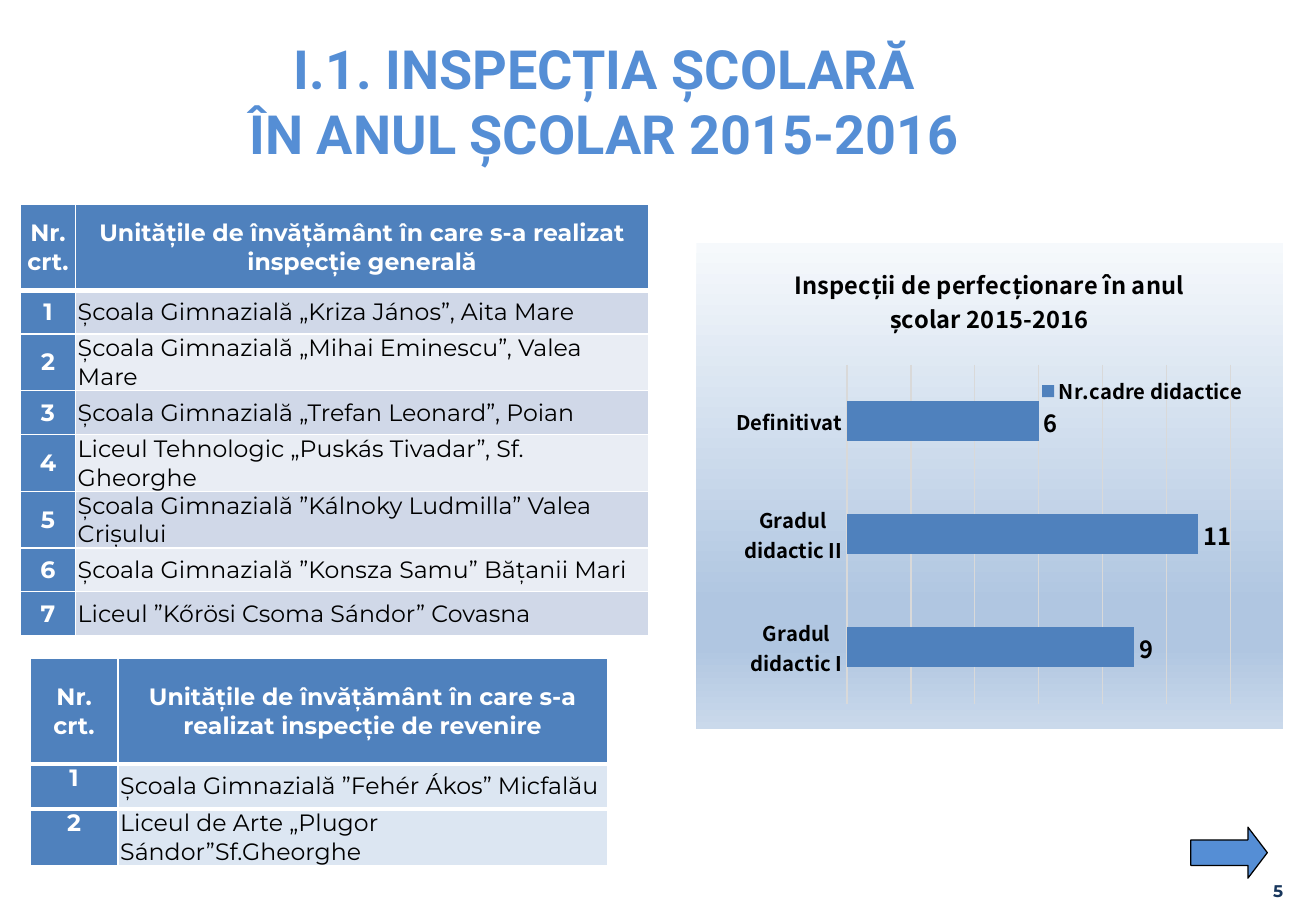
"""Builds the school inspection slide with two tables and a bar chart."""
from lxml.etree import SubElement
from pptx import Presentation
from pptx.chart.data import CategoryChartData
from pptx.dml.color import RGBColor
from pptx.enum.chart import XL_CHART_TYPE, XL_LABEL_POSITION, XL_LEGEND_POSITION, XL_TICK_MARK
from pptx.enum.shapes import MSO_SHAPE
from pptx.enum.text import MSO_ANCHOR, PP_ALIGN
from pptx.oxml import parse_xml
from pptx.oxml.ns import nsdecls, qn
from pptx.util import Inches, Pt

COLORS = {
    "title": "558ED5", "number": "17365C", "black": "000000", "white": "FFFFFF",
    "blue": "4F81BD", "band": "D0D8E8", "light": "E9EDF4", "pale": "DCE6F2",
    "grid": "D9D9D9",
}
TITLE = "I.1. INSPECȚIA ȘCOLARĂ\nÎN ANUL ȘCOLAR 2015-2016"
PAGE_NUMBER = "5"
TABLES = [
    {
        "place": (0.17, 1.68), "columns": (0.45, 4.72), "heights": (0.71, 0.36),
        "heading": "Unitățile de învățământ în care s-a realizat inspecție generală",
        "schools": [
            "Școala Gimnazială „Kriza János”, Aita Mare",
            "Școala Gimnazială „Mihai Eminescu”, Valea Mare",
            "Școala Gimnazială „Trefan Leonard”, Poian",
            "Liceul Tehnologic „Puskás Tivadar”, Sf. Gheorghe",
            "Școala Gimnazială ”Kálnoky Ludmilla” Valea Crișului",
            "Școala Gimnazială ”Konsza Samu” Bățanii Mari",
            "Liceul ”Kőrösi Csoma Sándor” Covasna",
        ],
        "bands": ("band", "light"), "thick_rules": (1,), "number_anchor": MSO_ANCHOR.MIDDLE,
    },
    {
        "place": (0.25, 5.42), "columns": (0.72, 4.03), "heights": (0.87, 0.37),
        "heading": "Unitățile de învățământ în care s-a realizat inspecție de revenire",
        "schools": [
            "Școala Gimnazială ”Fehér Ákos” Micfalău",
            "Liceul de Arte „Plugor Sándor”Sf.Gheorghe",
        ],
        "bands": ("pale", "pale"), "thick_rules": (1, 2), "number_anchor": MSO_ANCHOR.TOP,
    },
]
CHART_TITLE = "Inspecții de perfecționare în anul școlar 2015-2016"
SERIES_NAME = "Nr.cadre didactice"
TEACHERS = {"Gradul didactic I": 9, "Gradul didactic II": 11, "Definitivat": 6}
GRADIENT = [(0, "F6F9FC"), (74, "B0C6E1"), (83, "B0C6E1"), (100, "CAD9EB")]
PLOT_LAYOUT = (0.257, 0.251, 0.653, 0.698)
LEGEND_LAYOUT = (0.58, 0.27, 0.36, 0.07)


def color(name):
    return RGBColor.from_string(COLORS[name])


def style_font(font, name, size, tint, bold=True):
    font.name, font.size, font.bold = name, Pt(size), bold
    font.color.rgb = color(tint)


def add_text(page, place, text, name, size, tint, align, anchor, inset=0.0):
    box = page.shapes.add_textbox(*map(Inches, place))
    frame = box.text_frame
    frame.word_wrap, frame.vertical_anchor = True, anchor
    frame.margin_left = frame.margin_right = Inches(inset)
    frame.margin_top = frame.margin_bottom = Inches(inset / 2)
    frame.text = text
    for para in frame.paragraphs:
        para.alignment = align
        for span in para.runs:
            style_font(span.font, name, size, tint)


def add_borders(cell, widths):
    properties = cell._tc.get_or_add_tcPr()
    for side, width in zip("LRTB", widths):
        line = SubElement(properties, qn(f"a:ln{side}"), w=str(Pt(width)))
        fill = SubElement(line, qn("a:solidFill"))
        SubElement(fill, qn("a:srgbClr"), val=COLORS["white"])


def add_school_table(page, data):
    rows = [("Nr. crt.", data["heading"])]
    rows += [(str(number), school) for number, school in enumerate(data["schools"], 1)]
    header, body = data["heights"]
    heights = [header] + [body] * len(data["schools"])
    size = (sum(data["columns"]), sum(heights))
    table = page.shapes.add_table(len(rows), 2, *map(Inches, data["place"] + size)).table
    for column, width in zip(table.columns, data["columns"]):
        column.width = Inches(width)
    for index, texts in enumerate(rows):
        table.rows[index].height = Inches(heights[index])
        top, bottom = (3 if rule in data["thick_rules"] else 1 for rule in (index, index + 1))
        for position, text in enumerate(texts):
            cell = table.cell(index, position)
            is_school = index > 0 and position == 1
            is_number = index > 0 and position == 0
            add_borders(cell, (1, 1, top, bottom))
            cell.fill.solid()
            cell.fill.fore_color.rgb = color(data["bands"][(index - 1) % 2] if is_school else "blue")
            cell.margin_left = cell.margin_right = Inches(0.02)
            cell.margin_top = cell.margin_bottom = 0
            cell.vertical_anchor = data["number_anchor"] if is_number else MSO_ANCHOR.MIDDLE
            cell.text_frame.text = text
            para = cell.text_frame.paragraphs[0]
            para.alignment = PP_ALIGN.LEFT if is_school else PP_ALIGN.CENTER
            tint = "black" if is_school else "white"
            style_font(para.runs[0].font, "Montserrat", 14, tint, not is_school)


def manual_layout(place, inner=False):
    target = '<c:layoutTarget val="inner"/>' if inner else ""
    numbers = "".join(f'<c:{key} val="{value}"/>' for key, value in zip("xywh", place))
    return parse_xml(
        f'<c:layout {nsdecls("c")}><c:manualLayout>{target}<c:xMode val="edge"/>'
        f'<c:yMode val="edge"/>{numbers}</c:manualLayout></c:layout>')


def place_part(parent, place, index, inner=False):
    for layout in parent.findall(qn("c:layout")):
        parent.remove(layout)
    parent.insert(index, manual_layout(place, inner))


def add_teacher_chart(page):
    data = CategoryChartData()
    data.categories = list(TEACHERS)
    data.add_series(SERIES_NAME, list(TEACHERS.values()))
    place = map(Inches, (5.73, 2, 4.83, 4))
    chart = page.shapes.add_chart(XL_CHART_TYPE.BAR_CLUSTERED, *place, data).chart
    typeface = "Noto Sans CJK KR"
    style_font(chart.font, typeface, 12, "black")
    chart.has_title = True
    chart.chart_title.text_frame.text = CHART_TITLE
    style_font(chart.chart_title.text_frame.paragraphs[0].runs[0].font, typeface, 14, "black")

    category, value = chart.category_axis, chart.value_axis
    style_font(category.tick_labels.font, typeface, 12, "black")
    category.major_tick_mark = XL_TICK_MARK.NONE
    value.visible = False
    value.minimum_scale, value.maximum_scale, value.major_unit = 0, 12, 2
    value.has_major_gridlines = True
    for line in (category.format.line, value.major_gridlines.format.line):
        line.color.rgb, line.width = color("grid"), Pt(0.75)

    plot = chart.plots[0]
    plot.vary_by_categories, plot.gap_width = False, 182
    bars = plot.series[0]
    bars.format.fill.solid()
    bars.format.fill.fore_color.rgb = color("blue")
    labels = bars.data_labels
    labels.show_value, labels.position = True, XL_LABEL_POSITION.OUTSIDE_END
    style_font(labels.font, typeface, 14, "black")

    chart.has_legend = True
    chart.legend.position = XL_LEGEND_POSITION.RIGHT
    chart.legend.include_in_layout = False
    style_font(chart.legend.font, typeface, 12, "black")

    root = chart.element.find(qn("c:chart"))
    plot_area = root.find(qn("c:plotArea"))
    place_part(plot_area, PLOT_LAYOUT, 0, inner=True)
    place_part(root.find(qn("c:legend")), LEGEND_LAYOUT, 1)
    stops = "".join(
        f'<a:gs pos="{stop * 1000}"><a:srgbClr val="{tint}"/></a:gs>' for stop, tint in GRADIENT)
    root.addnext(parse_xml(
        f'<c:spPr {nsdecls("c", "a")}><a:gradFill><a:gsLst>{stops}</a:gsLst>'
        '<a:lin ang="5400000" scaled="0"/></a:gradFill><a:ln><a:noFill/></a:ln></c:spPr>'))


def add_next_arrow(page):
    arrow = page.shapes.add_shape(MSO_SHAPE.RIGHT_ARROW, *map(Inches, (9.8, 6.81, 0.63, 0.42)))
    arrow.adjustments[0], arrow.adjustments[1] = 0.5, 0.38
    arrow.shadow.inherit = False
    arrow.fill.solid()
    arrow.fill.fore_color.rgb = color("title")
    arrow.line.color.rgb, arrow.line.width = color("black"), Pt(0.75)


def main():
    deck = Presentation()
    deck.slide_width, deck.slide_height = Inches(10.83), Inches(7.5)
    page = deck.slides.add_slide(deck.slide_layouts[6])
    add_text(page, (9.66, 7.02, 0.9, 0.4), PAGE_NUMBER, "Montserrat", 10, "number",
             PP_ALIGN.RIGHT, MSO_ANCHOR.BOTTOM)
    add_next_arrow(page)
    add_text(page, (0.47, 0.25, 9.01, 1.15), TITLE, "Roboto", 32, "title",
             PP_ALIGN.CENTER, MSO_ANCHOR.MIDDLE, 0.1)
    add_teacher_chart(page)
    for data in TABLES:
        add_school_table(page, data)
    deck.save("out.pptx")


if __name__ == "__main__":
    main()
